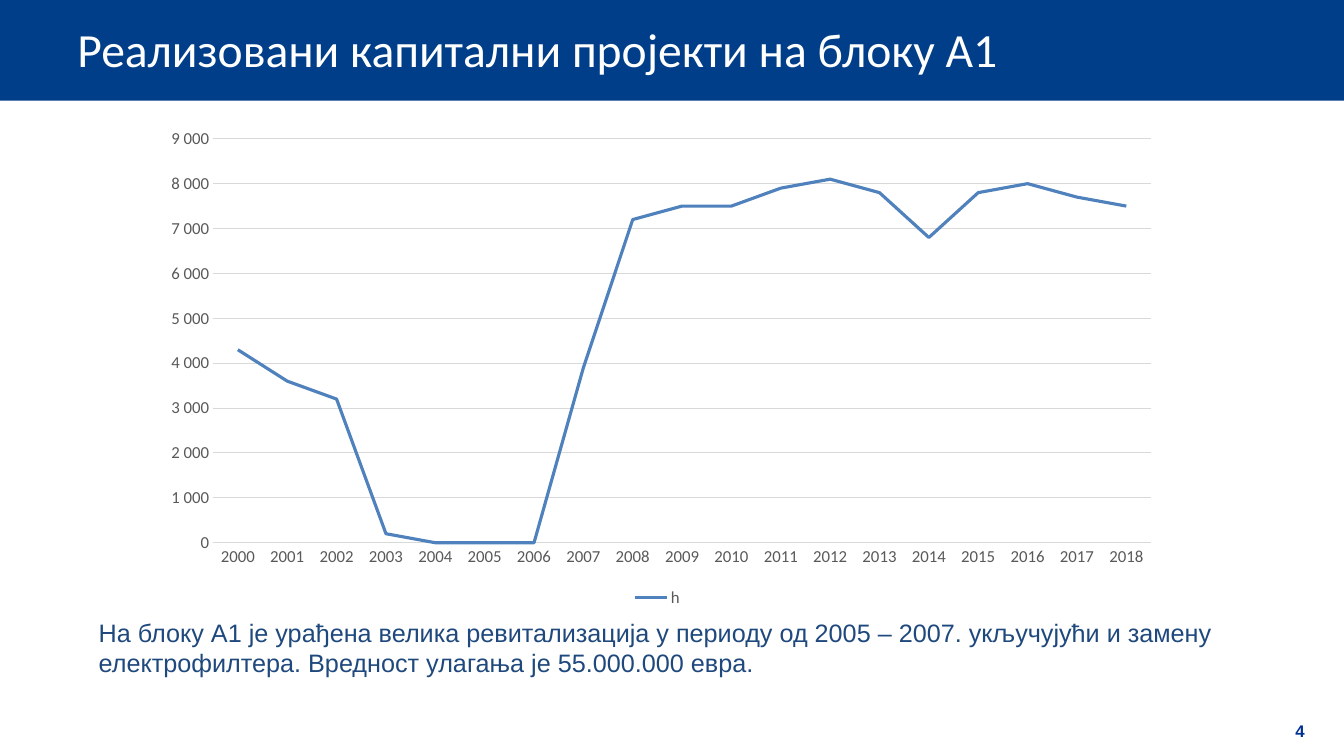
from pptx import Presentation
from pptx.chart.data import CategoryChartData
from pptx.dml.color import RGBColor
from pptx.enum.chart import XL_CHART_TYPE, XL_LEGEND_POSITION, XL_TICK_MARK
from pptx.enum.shapes import MSO_SHAPE
from pptx.enum.text import MSO_ANCHOR, PP_ALIGN
from pptx.util import Inches, Pt

LINE = XL_CHART_TYPE.LINE
BOTTOM = XL_LEGEND_POSITION.BOTTOM
NO_TICK = XL_TICK_MARK.NONE
RECT = MSO_SHAPE.RECTANGLE
TOP, MIDDLE = MSO_ANCHOR.TOP, MSO_ANCHOR.MIDDLE
LEFT, CENTER = PP_ALIGN.LEFT, PP_ALIGN.CENTER

# Content
TITLE = "Реализовани капитални пројекти на блоку А1"
NOTE = [
    "На блоку А1 је урађена велика ревитализација у периоду од 2005 – 2007. укључујући и замену",
    "електрофилтера. Вредност улагања је 55.000.000 евра.",
]
PAGE = "4"
YEARS = [str(year) for year in range(2000, 2019)]
HOURS = [4300, 3600, 3200, 200, 0, 0, 0, 3900, 7200, 7500,
         7500, 7900, 8100, 7800, 6800, 7800, 8000, 7700, 7500]
COLORS = {"band": "013E89", "title": "FFFFFF", "note": "1F497D", "page": "003296",
          "line": "4F81BD", "grid": "D9D9D9", "label": "595959", "black": "000000"}


def color(name):
    return RGBColor.from_string(COLORS[name])


def style(font, size, name, face, bold=False):
    font.size, font.name, font.bold = Pt(size), face, bold
    font.color.rgb = color(name)


def stroke(line, name, width):
    line.color.rgb = color(name)
    line.width = Pt(width)


def write(box, lines, size, name, face, anchor=TOP, align=LEFT, bold=False):
    frame = box.text_frame
    frame.word_wrap = True
    frame.vertical_anchor = anchor
    for i, line in enumerate(lines):
        para = frame.paragraphs[0] if i == 0 else frame.add_paragraph()
        para.alignment = align
        run = para.add_run()
        run.text = line
        style(run.font, size, name, face, bold)


def place(*lengths):
    return [Inches(n) for n in lengths]


deck = Presentation()
deck.slide_width, deck.slide_height = place(13.33, 7.5)
slide = deck.slides.add_slide(deck.slide_layouts[6])
shapes = slide.shapes

# Title band
band = shapes.add_shape(RECT, *place(0, 0, 13.33, 1))
band.shadow.inherit = False
band.fill.solid()
band.fill.fore_color.rgb = color("band")
band.line.fill.background()

# Page number, title and note
write(shapes.add_textbox(*place(12.55, 7.05, 0.69, 0.4)), [PAGE],
      12, "page", "Arial", MIDDLE, CENTER, True)
write(shapes.add_textbox(*place(0.67, 0.05, 10.96, 0.87)), [TITLE],
      34, "title", "Calibri", MIDDLE)
write(shapes.add_textbox(*place(0.88, 6.07, 12.09, 0.71)), NOTE,
      18, "note", "Arial")

# Line chart
data = CategoryChartData()
data.categories = YEARS
data.add_series("h", HOURS)
chart = shapes.add_chart(LINE, *place(1.42, 1.18, 10.2, 4.89), data).chart
style(chart.font, 10, "black", "Calibri")
chart.has_title = False
chart.has_legend = True
chart.legend.position = BOTTOM
chart.legend.include_in_layout = False
style(chart.legend.font, 12, "label", "Calibri")

plot = chart.plots[0]
plot.vary_by_categories = False
hours = plot.series[0]
hours.smooth = False
stroke(hours.format.line, "line", 2.25)

# Axes
years, scale = chart.category_axis, chart.value_axis
for axis in (years, scale):
    axis.major_tick_mark = axis.minor_tick_mark = NO_TICK
    style(axis.tick_labels.font, 12, "label", "Calibri")
stroke(years.format.line, "grid", 0.75)
scale.format.line.fill.background()
scale.minimum_scale, scale.maximum_scale, scale.major_unit = 0, 9000, 1000
scale.has_major_gridlines = True
stroke(scale.major_gridlines.format.line, "grid", 0.75)
scale.tick_labels.number_format = r"###\ ###\ ###\ ##0"
scale.tick_labels.number_format_is_linked = False

deck.save("out.pptx")
